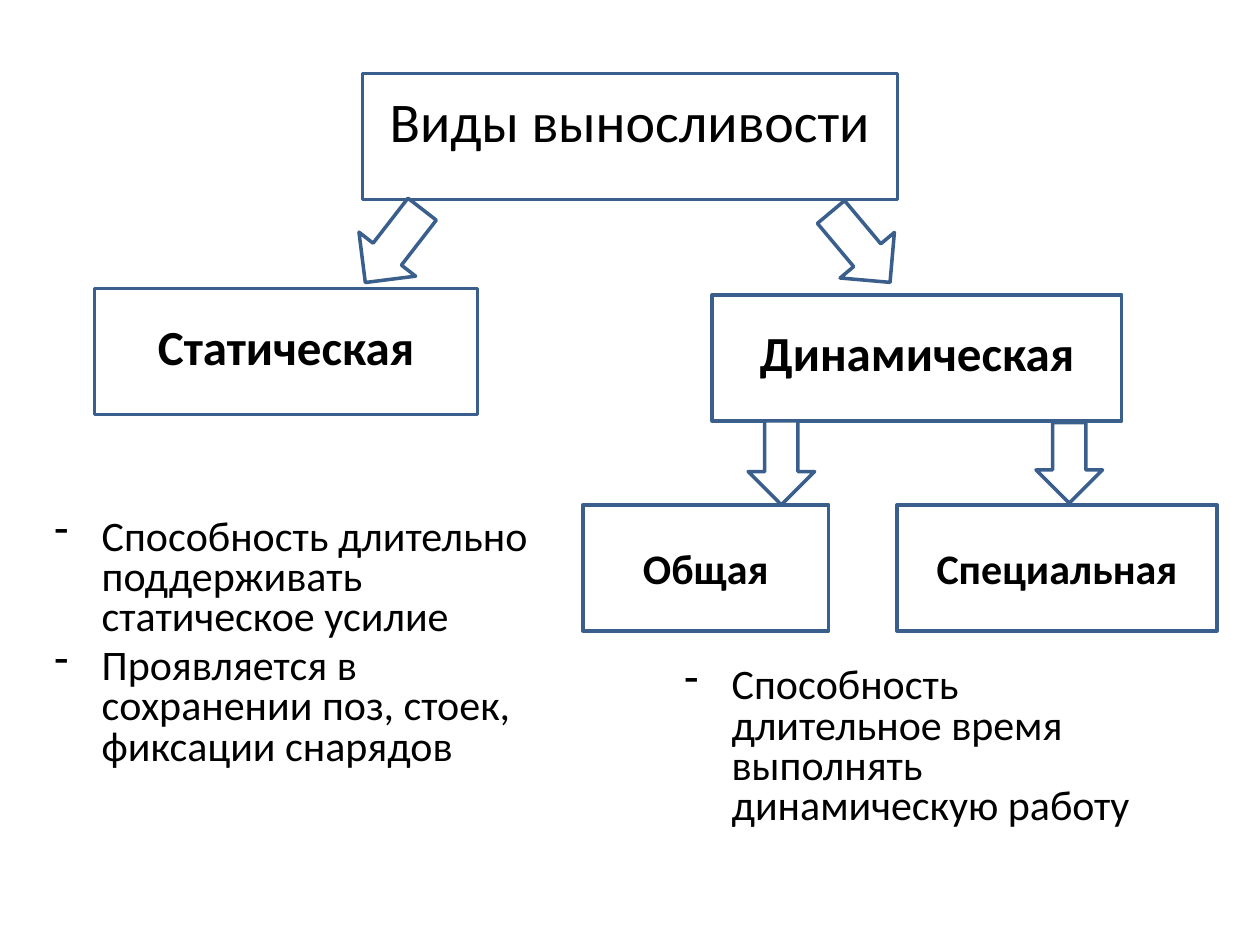
import pptx
import pptx.util
import pptx.dml.color
import pptx.enum.shapes
import pptx.enum.text
import pptx.oxml.ns
import lxml.etree

Pt = pptx.util.Pt
RGB = pptx.dml.color.RGBColor
Kind = pptx.enum.shapes.MSO_SHAPE
Align = pptx.enum.text.PP_ALIGN
Anchor = pptx.enum.text.MSO_ANCHOR

WHITE = RGB(0xFF, 0xFF, 0xFF)
BLACK = RGB(0, 0, 0)
BLUE = RGB(0x3A, 0x5F, 0x8C)
TIGHT = 0.8
BOX_TALL = 72
HANG = 27


class Deck:
    font = "Calibri"

    def __init__(self, wide, tall):
        self.file = pptx.Presentation()
        self.file.slide_width, self.file.slide_height = Pt(wide), Pt(tall)
        self.slide = self.file.slides.add_slide(self.file.slide_layouts[5])

    def paint(self, shape):
        shape.fill.solid()
        shape.fill.fore_color.rgb = WHITE
        shape.line.color.rgb = BLUE
        shape.line.width = Pt(2)

    def add_text(self, par, text, size, bold=False):
        run = par.add_run()
        run.text = text
        font = run.font
        font.name, font.size, font.bold = self.font, Pt(size), bold
        font.color.rgb = BLACK

    def space(self, par, size):
        """Set tight lines, with a fifth of the text size before them."""
        par.line_spacing = TIGHT
        par.space_before = Pt(size * 0.2)

    def shape(self, kind, x, y, w, h):
        shape = self.slide.shapes.add_shape(kind, Pt(x), Pt(y), Pt(w), Pt(h))
        shape.shadow.inherit = False
        self.paint(shape)
        return shape

    def title(self, text, x, y, w):
        head = self.slide.shapes.title
        head.left, head.top = Pt(x), Pt(y)
        head.width, head.height = Pt(w), Pt(BOX_TALL)
        self.paint(head)
        frame = head.text_frame
        frame.auto_size = pptx.enum.text.MSO_AUTO_SIZE.NONE
        frame.vertical_anchor = Anchor.MIDDLE
        frame.margin_bottom = Pt(22)
        par = frame.paragraphs[0]
        par.alignment = Align.CENTER
        self.add_text(par, text, 32)

    def box(self, text, x, y, w, size, tight=False):
        frame = self.shape(Kind.RECTANGLE, x, y, w, BOX_TALL).text_frame
        frame.word_wrap = True
        frame.vertical_anchor = Anchor.MIDDLE
        par = frame.paragraphs[0]
        par.alignment = Align.CENTER
        if tight:
            self.space(par, size)
        self.add_text(par, text, size, True)

    def arrow(self, x, y, w, h, turn=0):
        self.shape(Kind.DOWN_ARROW, x, y, w, h).rotation = turn

    def notes(self, items, x, y, w, h, size=24):
        """Add a list with dashes as bullets."""
        area = self.slide.shapes.add_textbox(Pt(x), Pt(y), Pt(w), Pt(h))
        frame = area.text_frame
        frame.word_wrap = True
        for i, text in enumerate(items):
            par = frame.add_paragraph() if i else frame.paragraphs[0]
            self.space(par, size)
            props = par._p.get_or_add_pPr()
            props.set("marL", str(Pt(HANG)))
            props.set("indent", str(-Pt(HANG)))
            mark = lxml.etree.SubElement(props, pptx.oxml.ns.qn("a:buChar"))
            mark.set("char", "-")
            self.add_text(par, text, size)


def main():
    deck = Deck(720, 540)
    deck.title("Виды выносливости", 207, 42, 306)

    deck.notes(["Способность длительно поддерживать статическое усилие",
                "Проявляется в сохранении поз, стоек, фиксации снарядов"],
               24, 293, 300, 247)
    deck.notes(["Способность длительное время выполнять динамическую работу"],
               384, 378, 291, 120)

    deck.box("Статическая", 54, 165, 219, 28, True)
    deck.box("Динамическая", 407, 168.5, 234, 28, True)
    deck.box("Общая", 333, 288.5, 140.5, 24)
    deck.box("Специальная", 512.5, 288.5, 183, 24)

    deck.arrow(204.5, 114, 41, 53, 37.8)
    deck.arrow(471.5, 115, 40.5, 52.5, 320)
    deck.arrow(427.5, 240.5, 38, 48)
    deck.arrow(592, 241.5, 38, 46)

    deck.file.save("out.pptx")


if __name__ == "__main__":
    main()
